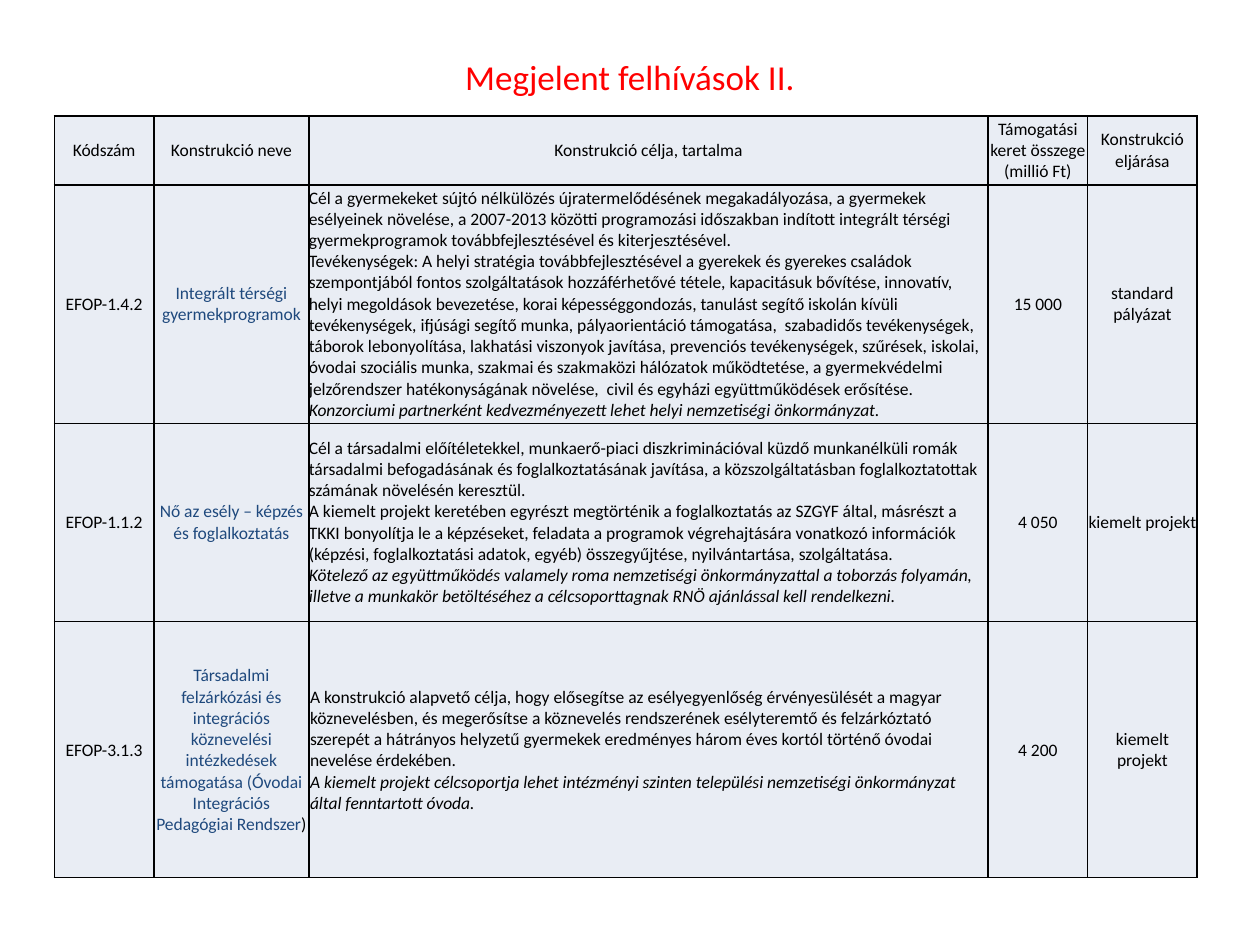
from dataclasses import dataclass

import pptx
import pptx.dml.color
import pptx.enum.text
import pptx.oxml.ns
import pptx.util
from lxml import etree

Pt = pptx.util.Pt
RGBColor = pptx.dml.color.RGBColor
Align = pptx.enum.text.PP_ALIGN
Anchor = pptx.enum.text.MSO_ANCHOR

RED = RGBColor(0xFF, 0x00, 0x00)
BLACK = RGBColor(0x00, 0x00, 0x00)
NAVY = RGBColor(0x1F, 0x49, 0x7D)
PALE_BLUE = RGBColor(0xE9, 0xED, 0xF4)

FONT = "Calibri"
TITLE_ONLY = 5
COLUMN_WIDTHS = (56.9, 88.6, 388.1, 56.9, 62.6)
HEADER_HEIGHT = 39.6
HEADERS = (
    "Kódszám",
    "Konstrukció neve",
    "Konstrukció célja, tartalma",
    "Támogatási keret összege (millió Ft)",
    "Konstrukció eljárása",
)


@dataclass(frozen=True)
class Span:
    text: str
    color: RGBColor = BLACK
    italic: bool = False


@dataclass(frozen=True)
class Call:
    code: str
    name: tuple[Span, ...]
    goals: tuple[str, ...]
    note: str
    amount: str
    procedure: str
    height: float
    inset: float = 0


CALLS = (
    Call(
        "EFOP-1.4.2",
        (Span("Integrált térségi gyermekprogramok", NAVY),),
        (
            "Cél a gyermekeket sújtó nélkülözés újratermelődésének megakadályozása, a gyermekek "
            "esélyeinek növelése, a 2007-2013 közötti programozási időszakban indított integrált "
            "térségi gyermekprogramok továbbfejlesztésével és kiterjesztésével.",
            "Tevékenységek: A helyi stratégia továbbfejlesztésével a gyerekek és gyerekes családok "
            "szempontjából fontos szolgáltatások hozzáférhetővé tétele, kapacitásuk bővítése, "
            "innovatív, helyi megoldások bevezetése, korai képességgondozás, tanulást segítő iskolán "
            "kívüli tevékenységek, ifjúsági segítő munka, pályaorientáció támogatása,  szabadidős "
            "tevékenységek, táborok lebonyolítása, lakhatási viszonyok javítása, prevenciós "
            "tevékenységek, szűrések, iskolai, óvodai szociális munka, szakmai és szakmaközi "
            "hálózatok működtetése, a gyermekvédelmi jelzőrendszer hatékonyságának növelése,  civil "
            "és egyházi együttműködések erősítése.",
        ),
        "Konzorciumi partnerként kedvezményezett lehet helyi nemzetiségi önkormányzat.",
        "15 000",
        "standard pályázat",
        136.1,
    ),
    Call(
        "EFOP-1.1.2",
        (Span("Nő az esély – képzés és foglalkoztatás", NAVY),),
        (
            "Cél a társadalmi előítéletekkel, munkaerő-piaci diszkriminációval küzdő munkanélküli "
            "romák társadalmi befogadásának és foglalkoztatásának javítása, a közszolgáltatásban "
            "foglalkoztatottak számának növelésén keresztül.",
            "A kiemelt projekt keretében egyrészt megtörténik a foglalkoztatás az SZGYF által, "
            "másrészt a TKKI bonyolítja le a képzéseket, feladata a programok végrehajtására "
            "vonatkozó információk (képzési, foglalkoztatási adatok, egyéb) összegyűjtése, "
            "nyilvántartása, szolgáltatása.",
        ),
        "Kötelező az együttműködés valamely roma nemzetiségi önkormányzattal a toborzás folyamán, "
        "illetve a munkakör betöltéséhez a célcsoporttagnak RNÖ ajánlással kell rendelkezni.",
        "4 050",
        "kiemelt projekt",
        113.4,
    ),
    Call(
        "EFOP-3.1.3",
        (
            Span(
                "Társadalmi felzárkózási és integrációs köznevelési intézkedések támogatása "
                "(Óvodai Integrációs Pedagógiai Rendszer",
                NAVY,
            ),
            Span(")"),
        ),
        (
            "A konstrukció alapvető célja, hogy elősegítse az esélyegyenlőség érvényesülését a "
            "magyar köznevelésben, és megerősítse a köznevelés rendszerének esélyteremtő és "
            "felzárkóztató szerepét a hátrányos helyzetű gyermekek eredményes három éves kortól "
            "történő óvodai nevelése érdekében.",
        ),
        "A kiemelt projekt célcsoportja lehet intézményi szinten települési nemzetiségi "
        "önkormányzat által fenntartott óvoda.",
        "4 200",
        "kiemelt projekt",
        146.2,
        0.7,
    ),
)


def add_span(para, span: Span, size: float) -> None:
    run = para.add_run()
    run.text = span.text
    run.font.name = FONT
    run.font.size = Pt(size)
    run.font.bold = False
    run.font.italic = span.italic
    run.font.color.rgb = span.color


def add_title(slide, text: str) -> None:
    title = slide.shapes.title
    title.left, title.top, title.width, title.height = Pt(36), Pt(21.6), Pt(648), Pt(44)
    frame = title.text_frame
    frame.auto_size = pptx.enum.text.MSO_AUTO_SIZE.NONE
    frame.vertical_anchor = Anchor.MIDDLE
    para = frame.paragraphs[0]
    para.alignment = Align.CENTER
    add_span(para, Span(text, RED), 20)


def style_cell(cell, inset: float) -> None:
    cell.margin_left = cell.margin_right = cell.margin_top = Pt(inset)
    cell.margin_bottom = 0
    cell.vertical_anchor = Anchor.MIDDLE
    qn = pptx.oxml.ns.qn
    properties = cell._tc.get_or_add_tcPr()
    for side in ("a:lnL", "a:lnR", "a:lnT", "a:lnB"):
        line = etree.SubElement(properties, qn(side), w=str(Pt(1)))
        fill = etree.SubElement(line, qn("a:solidFill"))
        etree.SubElement(fill, qn("a:srgbClr"), val=str(BLACK))
    cell.fill.solid()
    cell.fill.fore_color.rgb = PALE_BLUE


def fill_centered(cell, spans: tuple[Span, ...], inset: float = 0) -> None:
    style_cell(cell, inset)
    para = cell.text_frame.paragraphs[0]
    para.alignment = Align.CENTER
    for span in spans:
        add_span(para, span, 10)


def fill_goals(cell, call: Call) -> None:
    style_cell(cell, call.inset)
    para = cell.text_frame.paragraphs[0]
    para.alignment = Align.LEFT
    for index, goal in enumerate(call.goals):
        if index:
            para.add_line_break()
        add_span(para, Span(goal), 10)
    note = cell.text_frame.add_paragraph()
    note.alignment = Align.LEFT
    add_span(note, Span(call.note, italic=True), 10)


def add_calls_table(slide) -> None:
    heights = (HEADER_HEIGHT, *(call.height for call in CALLS))
    table = slide.shapes.add_table(
        len(heights), len(COLUMN_WIDTHS),
        Pt(31), Pt(66.2), Pt(sum(COLUMN_WIDTHS)), Pt(sum(heights)),
    ).table
    table.first_row = table.horz_banding = False
    for column, width in zip(table.columns, COLUMN_WIDTHS):
        column.width = Pt(width)
    for row, height in zip(table.rows, heights):
        row.height = Pt(height)
    for cell, header in zip(table.rows[0].cells, HEADERS):
        fill_centered(cell, (Span(header),))
    for row_index, call in enumerate(CALLS, start=1):
        code, name, goals, amount, procedure = table.rows[row_index].cells
        fill_centered(code, (Span(call.code),), call.inset)
        fill_centered(name, call.name, call.inset)
        fill_goals(goals, call)
        fill_centered(amount, (Span(call.amount),), call.inset)
        fill_centered(procedure, (Span(call.procedure),), call.inset)


def main() -> None:
    deck = pptx.Presentation()
    deck.slide_width, deck.slide_height = Pt(720), Pt(540)
    slide = deck.slides.add_slide(deck.slide_layouts[TITLE_ONLY])
    add_title(slide, "Megjelent felhívások II.")
    add_calls_table(slide)
    deck.save("out.pptx")


if __name__ == "__main__":
    main()
